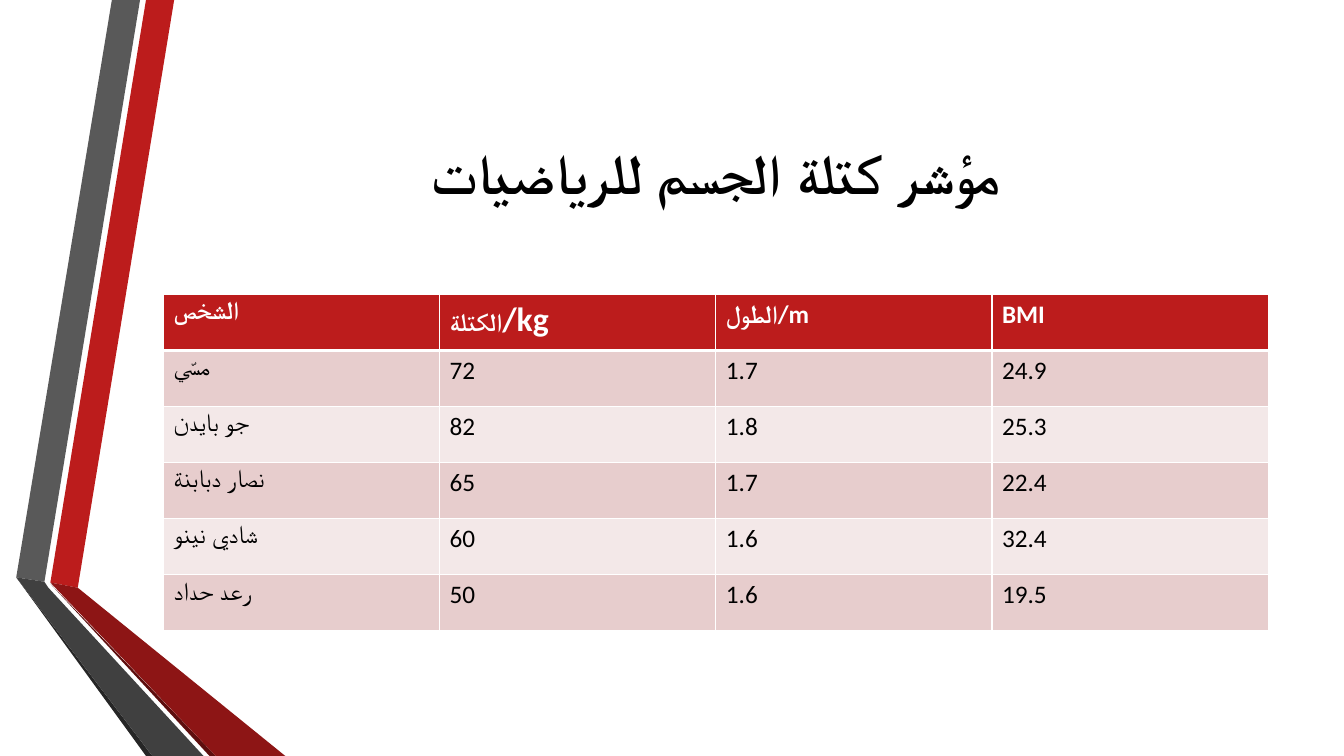
from dataclasses import dataclass

from lxml.etree import SubElement
from pptx import Presentation
from pptx.dml.color import RGBColor as Color
from pptx.enum.text import MSO_ANCHOR as Anchor, PP_ALIGN as Align
from pptx.oxml.ns import qn
from pptx.util import Cm, Pt


@dataclass(frozen=True)
class Theme:
    font: str = "Calibri"
    black: str = "000000"
    white: str = "FFFFFF"
    red: str = "BC1C1C"
    dark_red: str = "8D1515"
    deep_red: str = "5E0E0E"
    gray: str = "595959"
    dark_gray: str = "404040"
    deep_gray: str = "262626"
    pink: str = "E7CDCD"
    pale_pink: str = "F3E8E8"
    title_size: int = 40
    unit_size: int = 24
    cell_size: int = 18
    thin: int = 1
    thick: int = 3


theme = Theme()


def add_span(para, text, size, color, bold):
    span = para.add_run()
    span.text = text
    span.font.name = theme.font
    span.font.size = Pt(size)
    span.font.bold = bold
    span.font.color.rgb = Color.from_string(color)


def add_border(cell, side, width):
    line = SubElement(cell._tc.get_or_add_tcPr(), qn(f"a:ln{side}"), w=str(Pt(width)))
    fill = SubElement(line, qn("a:solidFill"))
    SubElement(fill, qn("a:srgbClr"), val=theme.white)


deck = Presentation()
deck.slide_width, deck.slide_height = Cm(33.87), Cm(19.05)
page = deck.slides.add_slide(deck.slide_layouts[5])

ribbons = [
    (theme.red, [(1.27, 14.68), (1.96, 14.81), (4.39, 0), (3.68, 0)]),
    (theme.gray, [(3.53, 0), (2.82, 0), (0.41, 14.55), (1.12, 14.66)]),
    (theme.deep_gray, [(0.41, 14.55), (3.68, 19.05), (3.84, 19.05)]),
    (theme.deep_red, [(1.27, 14.71), (5.28, 19.05), (5.44, 19.05)]),
    (theme.dark_red, [(1.27, 14.68), (5.44, 19.05), (7.19, 19.05), (1.96, 14.81)]),
    (theme.dark_gray, [(5.13, 19.05), (1.22, 14.81), (1.12, 14.66), (0.41, 14.55), (3.84, 19.05)]),
]
for color, corners in ribbons:
    points = [(Cm(x), Cm(y)) for x, y in corners]
    outline = page.shapes.build_freeform(*points[0])
    outline.add_line_segments(points[1:], close=True)
    ribbon = outline.convert_to_shape()
    ribbon.shadow.inherit = False
    ribbon.fill.solid()
    ribbon.fill.fore_color.rgb = Color.from_string(color)
    ribbon.line.fill.background()

left, width = Cm(4.12), Cm(27.84)
title = page.shapes.title
title.left, title.top, title.width, title.height = left, Cm(1.9), width, Cm(4.88)
title.text_frame.vertical_anchor = Anchor.MIDDLE
para = title.text_frame.paragraphs[0]
para.alignment = Align.CENTER
add_span(para, "مؤشر كتلة الجسم للرياضيات", theme.title_size, theme.black, True)

header = [
    [("الشخص", theme.cell_size)],
    [("الكتلة", theme.cell_size), ("/kg", theme.unit_size)],
    [("الطول/m", theme.cell_size)],
    [("BMI", theme.cell_size)],
]
people = [
    ("مسّي", "72", "1.7", "24.9"),
    ("جو بايدن", "82", "1.8", "25.3"),
    ("نصار دبابنة", "65", "1.7", "22.4"),
    ("شادي نينو", "60", "1.6", "32.4"),
    ("رعد حداد", "50", "1.6", "19.5"),
]
rows = [header] + [[[(value, theme.cell_size)] for value in person] for person in people]

table = page.shapes.add_table(len(rows), len(header), left, Cm(7.42), width, Cm(8.48)).table
for row_index, row in enumerate(rows):
    is_header = row_index == 0
    shade = theme.red if is_header else (theme.pale_pink, theme.pink)[row_index % 2]
    ink = theme.white if is_header else theme.black
    for column_index, spans in enumerate(row):
        cell = table.cell(row_index, column_index)
        add_border(cell, "L", theme.thin)
        add_border(cell, "R", theme.thin)
        add_border(cell, "T", theme.thick if row_index == 1 else theme.thin)
        add_border(cell, "B", theme.thick if is_header else theme.thin)
        cell.fill.solid()
        cell.fill.fore_color.rgb = Color.from_string(shade)
        para = cell.text_frame.paragraphs[0]
        para.alignment = Align.LEFT
        for text, size in spans:
            add_span(para, text, size, ink, is_header)

deck.save("out.pptx")
